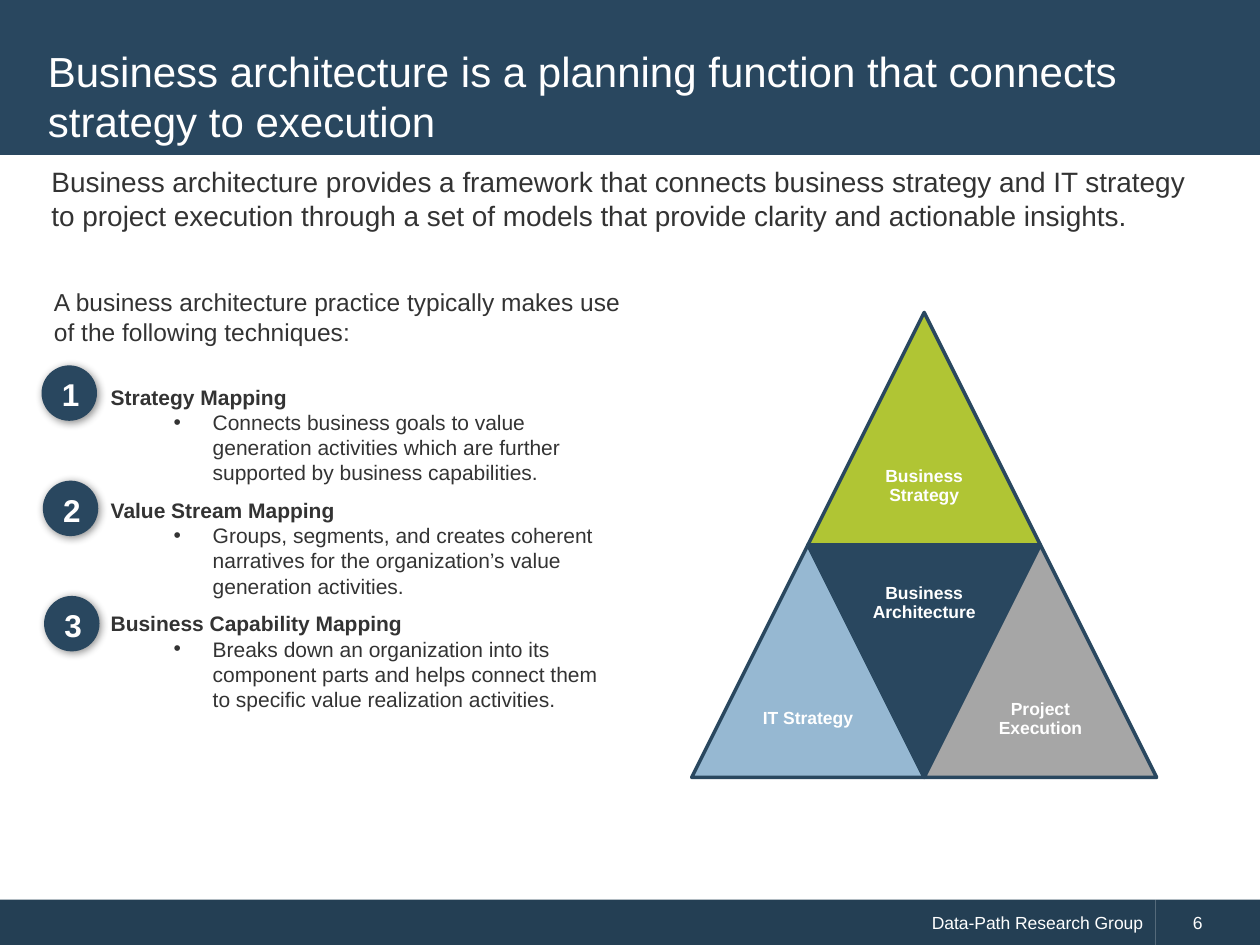
from dataclasses import dataclass

from lxml.etree import SubElement
from pptx import Presentation
from pptx.dml.color import RGBColor
from pptx.enum.shapes import MSO_SHAPE as Shape
from pptx.enum.text import MSO_ANCHOR as Anchor, PP_ALIGN as Align
from pptx.oxml.ns import qn
from pptx.util import Inches, Pt


@dataclass(frozen=True)
class Theme:
    font: str = "Arial"
    navy: str = "29475F"
    footer: str = "243F54"
    green: str = "B0C534"
    blue: str = "96B8D2"
    gray: str = "A6A6A6"
    ink: str = "333333"
    white: str = "FFFFFF"
    title_size: int = 24
    lead_size: int = 16
    intro_size: int = 14
    body_size: int = 12
    label_size: int = 10
    number_size: int = 18


THEME = Theme()

TECHNIQUES = [
    ("Strategy Mapping",
     "Connects business goals to value generation activities which are "
     "further supported by business capabilities."),
    ("Value Stream Mapping",
     "Groups, segments, and creates coherent narratives for the "
     "organization’s value generation activities."),
    ("Business Capability Mapping",
     "Breaks down an organization into its component parts and helps "
     "connect them to specific value realization activities."),
]


def format_paragraph(paragraph, size, color, bold=False, align=Align.LEFT):
    paragraph.alignment = align
    for run in paragraph.runs:
        font = run.font
        font.name, font.size, font.bold = THEME.font, Pt(size), bold
        font.color.rgb = RGBColor.from_string(color)


def set_insets(text_frame, left, top, right, bottom):
    text_frame.margin_left, text_frame.margin_top = Inches(left), Inches(top)
    text_frame.margin_right, text_frame.margin_bottom = Inches(right), Inches(bottom)


def set_indent(paragraph, left, first=0.0):
    properties = paragraph._p.get_or_add_pPr()
    properties.set("marL", str(Inches(left)))
    properties.set("indent", str(Inches(first)))
    return properties


def fill_shape(shape, color):
    shape.shadow.inherit = False
    shape.fill.solid()
    shape.fill.fore_color.rgb = RGBColor.from_string(color)
    shape.line.fill.background()


def add_block(slide, kind, left, top, width, height, color):
    shape = slide.shapes.add_shape(
        kind, Inches(left), Inches(top), Inches(width), Inches(height))
    fill_shape(shape, color)
    shape.text_frame.vertical_anchor = Anchor.MIDDLE
    return shape


def add_text(slide, left, top, width, height, text, size):
    box = slide.shapes.add_textbox(
        Inches(left), Inches(top), Inches(width), Inches(height))
    box.text_frame.word_wrap = True
    box.text_frame.text = text
    format_paragraph(box.text_frame.paragraphs[0], size, THEME.ink)
    return box


def add_header(slide, left, top, width, height):
    band = add_block(slide, Shape.RECTANGLE, left, top, width, height, THEME.navy)
    title = slide.shapes.title
    title.element.addprevious(band.element)  # keep the band behind the title
    title.left, title.top = Inches(left + 0.28), Inches(top + 0.28)
    title.width, title.height = Inches(width - 0.57), Inches(height - 0.27)
    title.text_frame.text = ("Business architecture is a planning function "
                             "that connects strategy to execution")
    title.text_frame.vertical_anchor = Anchor.MIDDLE
    format_paragraph(title.text_frame.paragraphs[0], THEME.title_size, THEME.white)


def add_footer(slide, left, top, width, height):
    number_width = 0.83
    name_width = width - number_width
    parts = [
        (left, name_width, "Data-Path Research Group", Align.RIGHT, 0.29),
        (left + name_width, number_width, "6", Align.LEFT, 0.2),
    ]
    for part_left, part_width, text, align, indent in parts:
        part = add_block(slide, Shape.RECTANGLE, part_left, top,
                         part_width, height, THEME.footer)
        part.text_frame.text = text
        paragraph = part.text_frame.paragraphs[0]
        format_paragraph(paragraph, THEME.label_size, THEME.white, align=align)
        set_indent(paragraph, indent)


def add_soft_shadow(shape):
    effects = shape.element.spPr.find(qn("a:effectLst"))
    shadow = SubElement(effects, qn("a:outerShdw"), blurRad=str(Pt(5)),
                        dist=str(Pt(1.4)), dir="2700000", rotWithShape="0")
    color = SubElement(shadow, qn("a:srgbClr"), val="000000")
    SubElement(color, qn("a:alpha"), val="45000")


def add_techniques(slide, left, top, width, height):
    # Headings, each with one bulleted description
    text_left = 0.45
    box = slide.shapes.add_textbox(Inches(left + text_left), Inches(top),
                                   Inches(width - text_left), Inches(height))
    text_frame = box.text_frame
    text_frame.word_wrap = True
    text_frame.text = "\n".join(
        line for technique in TECHNIQUES for line in technique)
    for index, paragraph in enumerate(text_frame.paragraphs):
        is_heading = index % 2 == 0
        format_paragraph(paragraph, THEME.body_size, THEME.ink, bold=is_heading)
        if is_heading:
            paragraph.line_spacing = 1.5
        else:
            paragraph.level = 1
            properties = set_indent(paragraph, 0.81, -0.31)
            SubElement(properties, qn("a:buFont"), typeface=THEME.font)
            SubElement(properties, qn("a:buChar"), char="•")

    # Numbered circles
    for index in range(len(TECHNIQUES)):
        circle = add_block(slide, Shape.OVAL, left + 0.01 * index,
                           top + 0.915 * index, 0.44, 0.44, THEME.navy)
        add_soft_shadow(circle)
        circle.text_frame.text = str(index + 1)
        circle.text_frame.word_wrap = False
        set_insets(circle.text_frame, 0.02, 0.02, 0, 0)
        format_paragraph(circle.text_frame.paragraphs[0], THEME.number_size,
                         THEME.white, bold=True, align=Align.CENTER)


def add_triangle(slide, points, label, color, points_up):
    corners = [(Inches(x), Inches(y)) for x, y in points]
    builder = slide.shapes.build_freeform(*corners[0])
    builder.add_line_segments(corners[1:], close=True)
    triangle = builder.convert_to_shape()
    fill_shape(triangle, color)
    triangle.line.color.rgb = RGBColor.from_string(THEME.navy)
    triangle.line.width = Pt(2)
    SubElement(triangle.element.spPr.find(qn("a:ln")), qn("a:round"))

    # The label sits in the wide half
    text_frame = triangle.text_frame
    text_frame.text = label
    text_frame.word_wrap = True
    text_frame.vertical_anchor = Anchor.MIDDLE
    top, bottom = (0.96, 0.04) if points_up else (0.04, 0.96)
    set_insets(text_frame, 0.5, top, 0.5, bottom)
    paragraph = text_frame.paragraphs[0]
    format_paragraph(paragraph, THEME.label_size, THEME.white,
                     bold=True, align=Align.CENTER)
    paragraph.line_spacing = 0.9


def add_pyramid(slide, left, top, width, height):
    half, middle = width / 2, top + height / 2
    bottom = top + height
    parts = [
        (left + half / 2, middle, top, "Business Strategy", THEME.green),
        (left, bottom, middle, "IT Strategy", THEME.blue),
        (left + half / 2, middle, bottom, "Business Architecture", THEME.navy),
        (left + half, bottom, middle, "Project Execution", THEME.gray),
    ]
    for x, base, apex, label, color in parts:
        points = [(x, base), (x + half / 2, apex), (x + half, base)]
        add_triangle(slide, points, label, color, points_up=apex < base)


def main():
    presentation = Presentation()
    presentation.slide_width, presentation.slide_height = Inches(10), Inches(7.5)
    slide = presentation.slides.add_slide(presentation.slide_layouts[5])

    add_footer(slide, 0, 7.14, 10, 0.36)
    add_header(slide, 0, 0, 10, 1.23)
    add_text(slide, 0.33, 2.23, 4.72, 0.57,
             "A business architecture practice typically makes use of the "
             "following techniques:", THEME.intro_size)
    add_text(slide, 0.31, 1.26, 9.39, 0.64,
             "Business architecture provides a framework that connects business "
             "strategy and IT strategy to project execution through a set of "
             "models that provide clarity and actionable insights.",
             THEME.lead_size)
    add_pyramid(slide, 5.49, 2.48, 3.69, 3.69)
    add_techniques(slide, 0.33, 2.9, 4.66, 2.83)
    presentation.save("out.pptx")


if __name__ == "__main__":
    main()
